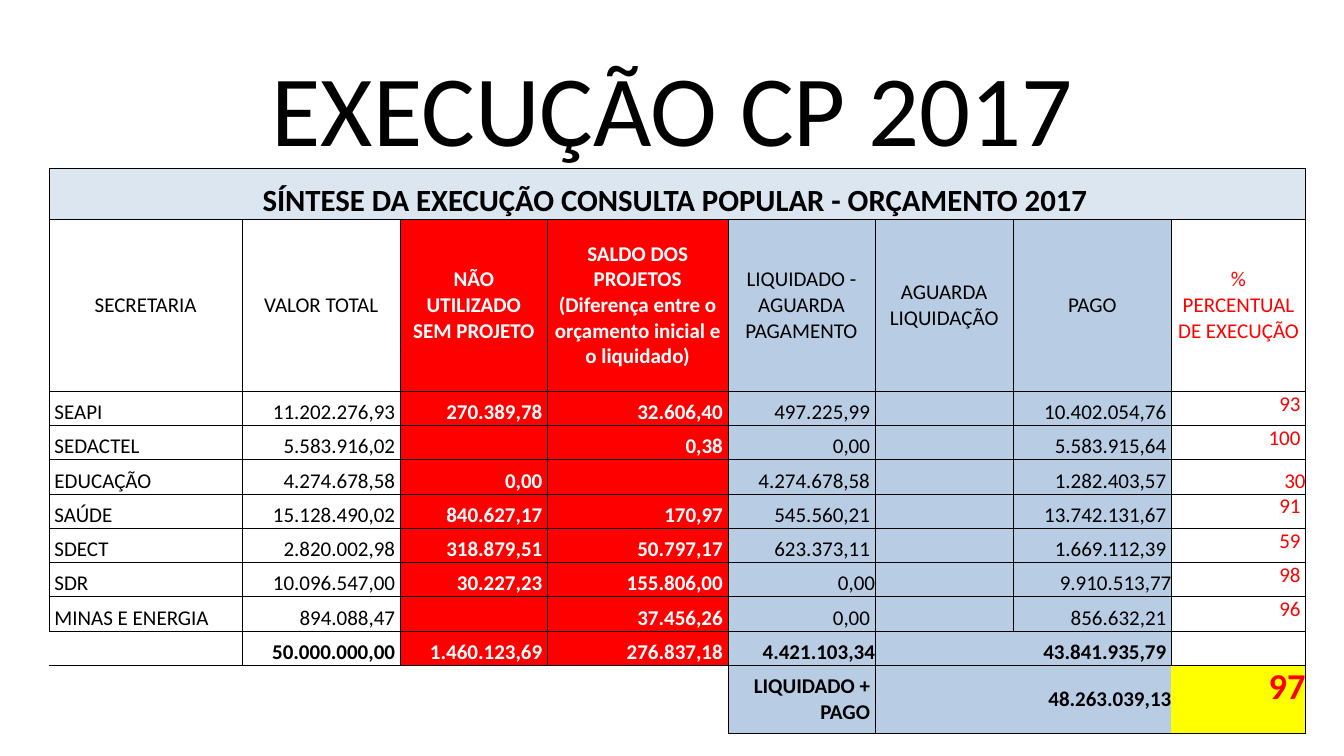
from dataclasses import dataclass

from lxml.etree import SubElement
from pptx import Presentation
from pptx.dml.color import RGBColor
from pptx.enum.text import MSO_ANCHOR as Anchor, MSO_AUTO_SIZE as AutoSize, PP_ALIGN as Align
from pptx.oxml.ns import qn
from pptx.slide import Slide
from pptx.table import Table, _Cell as Cell
from pptx.util import Emu, Pt

EMU_PER_PX = 9144


@dataclass(frozen=True)
class Theme:
    font: str = "Calibri"
    black: str = "000000"
    white: str = "FFFFFF"
    red: str = "FF0000"
    blue: str = "B8CCE4"
    pale_blue: str = "DCE6F1"
    yellow: str = "FFFF00"
    title_size: int = 72
    banner_size: int = 22
    body_size: int = 15
    result_size: int = 26
    border_width: float = 0.5
    plain_table: str = "{2D5ABB26-0587-4C30-8999-92F81FD0307C}"


@dataclass(frozen=True)
class Column:
    heading: str
    width: int
    fill: str
    color: str
    bold: bool = False


@dataclass(frozen=True)
class CellStyle:
    fill: str
    color: str
    bold: bool
    size: int
    align: Align
    anchor: Anchor
    left: int
    right: int
    borders: str


THEME = Theme()
PADDING = 5

COLUMNS = [
    Column("SECRETARIA", 191, THEME.white, THEME.black),
    Column("VALOR TOTAL", 157, THEME.white, THEME.black),
    Column("NÃO\vUTILIZADO\vSEM PROJETO", 146, THEME.red, THEME.white, True),
    Column("SALDO DOS PROJETOS\v(Diferença entre o orçamento inicial e o liquidado)",
           179, THEME.red, THEME.white, True),
    Column("LIQUIDADO - AGUARDA PAGAMENTO", 146, THEME.blue, THEME.black),
    Column("AGUARDA\vLIQUIDAÇÃO", 137, THEME.blue, THEME.black),
    Column("PAGO", 157, THEME.blue, THEME.black),
    Column("% PERCENTUAL DE EXECUÇÃO", 133, THEME.white, THEME.red),
]

BANNER = ["SÍNTESE DA EXECUÇÃO CONSULTA POPULAR - ORÇAMENTO 2017"] + [""] * 7
SECRETARIATS = [
    ["SEAPI", "11.202.276,93", "270.389,78", "32.606,40", "497.225,99", "", "10.402.054,76", "93"],
    ["SEDACTEL", "5.583.916,02", "", "0,38", "0,00", "", "5.583.915,64", "100"],
    ["EDUCAÇÃO", "4.274.678,58", "0,00", "", "4.274.678,58", "", "1.282.403,57", "30"],
    ["SAÚDE", "15.128.490,02", "840.627,17", "170,97", "545.560,21", "", "13.742.131,67", "91"],
    ["SDECT", "2.820.002,98", "318.879,51", "50.797,17", "623.373,11", "", "1.669.112,39", "59"],
    ["SDR", "10.096.547,00", "30.227,23", "155.806,00", "0,00", "", "9.910.513,77", "98"],
    ["MINAS E ENERGIA", "894.088,47", "", "37.456,26", "0,00", "", "856.632,21", "96"],
]
TOTALS = ["", "50.000.000,00", "1.460.123,69", "276.837,18", "4.421.103,34", "", "43.841.935,79", ""]
RESULT = ["", "", "", "", "LIQUIDADO + PAGO", "", "48.263.039,13", "97"]

ROWS = [BANNER, [column.heading for column in COLUMNS], *SECRETARIATS, TOTALS, RESULT]
ROW_HEIGHTS = [51, 170] + [34] * 8 + [68]
TOTALS_ROW, RESULT_ROW = 9, 10
PERCENT_COLUMN = 7
UNPADDED = {(4, 7), (7, 4), (7, 6), (9, 4), (10, 6), (10, 7)}
BORDERS = {
    (9, 0): "TR", (9, 4): "LTB", (9, 5): "TB", (9, 6): "TRB",
    (10, 0): "", (10, 1): "T", (10, 2): "T", (10, 3): "TR",
    (10, 4): "LTB", (10, 5): "TB", (10, 6): "TB", (10, 7): "TRB",
}


def px(length: int) -> Emu:
    return Emu(length * EMU_PER_PX)


def cell_style(row: int, index: int) -> CellStyle:
    column = COLUMNS[index]
    fill, color, size = column.fill, column.color, THEME.body_size
    bold = column.bold or row == 0 or row >= TOTALS_ROW
    align, anchor = Align.RIGHT, Anchor.BOTTOM
    left, right = 0, 0 if (row, index) in UNPADDED else PADDING
    if row == 0:
        fill, color, size, align = THEME.pale_blue, THEME.black, THEME.banner_size, Align.CENTER
    elif row == 1:
        align, anchor, left = Align.CENTER, Anchor.MIDDLE, PADDING
    elif row == RESULT_ROW:
        anchor = Anchor.MIDDLE
        if index < 4:
            fill = THEME.white
        elif index == PERCENT_COLUMN:
            fill, size, anchor = THEME.yellow, THEME.result_size, Anchor.TOP
    elif index == 0:
        align, left = Align.LEFT, PADDING
    elif index == PERCENT_COLUMN and (row, index) not in UNPADDED:
        anchor = Anchor.TOP
    return CellStyle(fill, color, bold, size, align, anchor, left, right,
                     BORDERS.get((row, index), "LRTB"))


def draw_borders(cell: Cell, sides: str) -> None:
    properties = cell._tc.get_or_add_tcPr()
    for side in "LRTB":
        if side in sides:
            line = SubElement(properties, qn(f"a:ln{side}"), w=str(Pt(THEME.border_width)))
            fill = SubElement(line, qn("a:solidFill"))
            SubElement(fill, qn("a:srgbClr"), val=THEME.black)


def draw_cell(cell: Cell, text: str, style: CellStyle) -> None:
    draw_borders(cell, style.borders)
    cell.fill.solid()
    cell.fill.fore_color.rgb = RGBColor.from_string(style.fill)
    cell.margin_left, cell.margin_right = px(style.left), px(style.right)
    cell.margin_top = cell.margin_bottom = 0
    cell.vertical_anchor = style.anchor
    cell.text_frame.text = text
    paragraph = cell.text_frame.paragraphs[0]
    paragraph.alignment = style.align
    font = paragraph.font
    font.name, font.size, font.bold = THEME.font, Pt(style.size), style.bold
    font.color.rgb = RGBColor.from_string(style.color)


def draw_title(slide: Slide, text: str) -> None:
    title = slide.shapes.title
    title.left, title.top, title.width, title.height = map(px, (92, 40, 1150, 145))
    frame = title.text_frame
    frame.text = text
    frame.auto_size = AutoSize.NONE
    frame.vertical_anchor = Anchor.MIDDLE
    paragraph = frame.paragraphs[0]
    paragraph.alignment = Align.CENTER
    paragraph.line_spacing = 0.9
    paragraph.font.name, paragraph.font.size = THEME.font, Pt(THEME.title_size)
    paragraph.font.color.rgb = RGBColor.from_string(THEME.black)


def draw_table(slide: Slide) -> Table:
    width = sum(column.width for column in COLUMNS)
    table = slide.shapes.add_table(
        len(ROWS), len(COLUMNS), px(49), px(167), px(width), px(sum(ROW_HEIGHTS))).table
    table.first_row = table.horz_banding = False
    table._tbl.tblPr.find(qn("a:tableStyleId")).text = THEME.plain_table
    for index, column in enumerate(COLUMNS):
        table.columns[index].width = px(column.width)
    for row, (texts, height) in enumerate(zip(ROWS, ROW_HEIGHTS)):
        table.rows[row].height = px(height)
        for index, text in enumerate(texts):
            draw_cell(table.cell(row, index), text, cell_style(row, index))
    table.cell(0, 0).merge(table.cell(0, PERCENT_COLUMN))
    table.cell(RESULT_ROW, 2).merge(table.cell(RESULT_ROW, 3))
    return table


def main() -> None:
    presentation = Presentation()
    presentation.slide_width, presentation.slide_height = px(1333), px(750)
    slide = presentation.slides.add_slide(presentation.slide_layouts[5])
    draw_title(slide, "EXECUÇÃO CP 2017")
    draw_table(slide)
    presentation.save("out.pptx")


if __name__ == "__main__":
    main()
